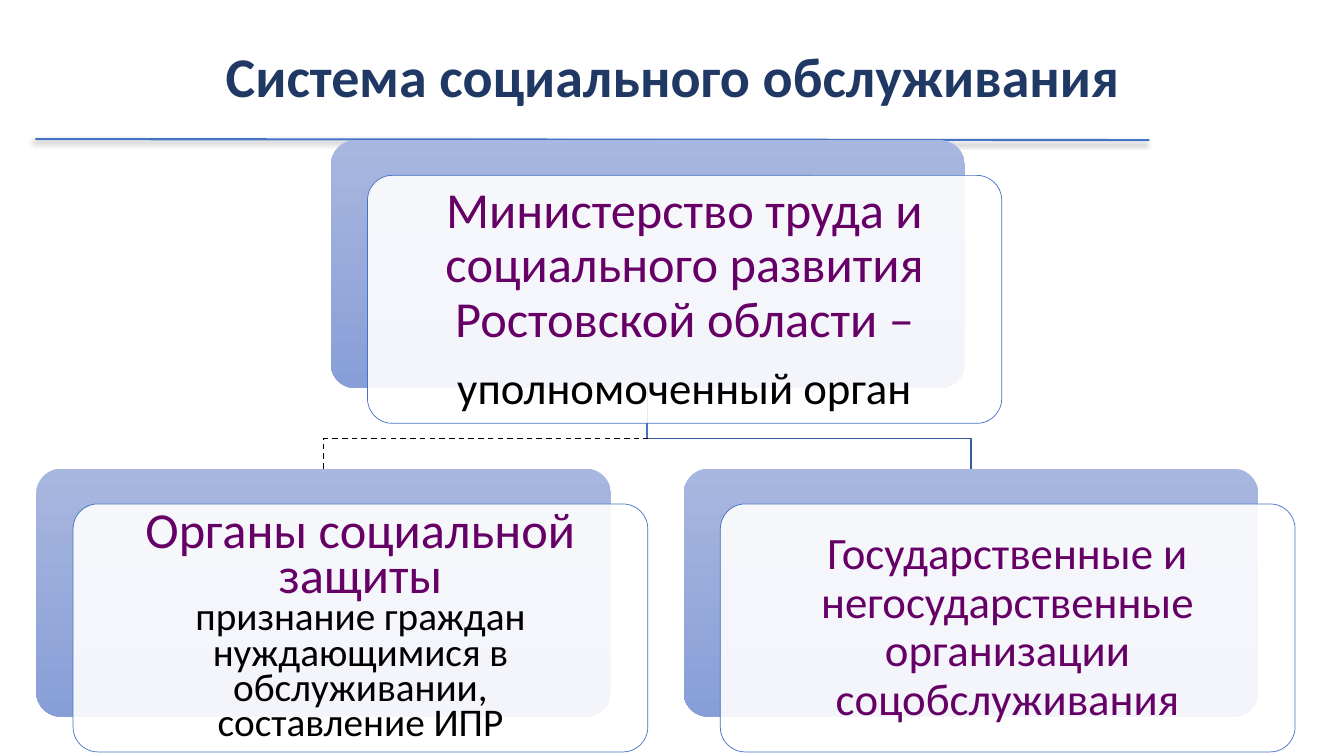
from lxml import etree
from pptx import Presentation
from pptx.dml.color import RGBColor
from pptx.enum.dml import MSO_LINE
from pptx.enum.shapes import MSO_CONNECTOR, MSO_SHAPE
from pptx.enum.text import MSO_ANCHOR, MSO_AUTO_SIZE, PP_ALIGN
from pptx.oxml import parse_xml
from pptx.oxml.ns import nsdecls, qn
from pptx.util import Inches, Pt

ROUNDED = MSO_SHAPE.ROUNDED_RECTANGLE
STRAIGHT = MSO_CONNECTOR.STRAIGHT
CENTER = PP_ALIGN.CENTER
MIDDLE = MSO_ANCHOR.MIDDLE
NO_AUTOFIT = MSO_AUTO_SIZE.NONE
DASH = MSO_LINE.DASH

FONT = "Calibri"
COLORS = {
    "title": "203864",
    "line": "4472C4",
    "branch": "365B9D",
    "purple": "660066",
    "black": "000000",
    "white": "FFFFFF",
    "back_top": "A8B7DF",
    "back_bottom": "889ED7",
}
CARD_HEIGHT = 2.46
CARD_SHIFT = (0.365, 0.35)
TRUNK_X, TRUNK_TOP, BRANCH_Y, BRANCH_BOTTOM = 6.42, 3.85, 4.35, 4.65

# left, top, width, inset, line spacing, space after, (text, size, colour)
CARDS = [
    (3.28, 1.39, 6.29, 0.15, 0.9, 12.6, [
        ("Министерство труда и социального развития Ростовской области –", 36, "purple"),
        ("уполномоченный орган", 32, "black"),
    ]),
    (0.36, 4.65, 5.7, 0.15, 0.75, 0, [
        ("Органы социальной защиты", 36, "purple"),
        ("признание граждан нуждающимися в обслуживании,\nсоставление ИПР", 28, "black"),
    ]),
    (6.78, 4.65, 5.7, 0.13, 0.9, 11.2, [
        ("Государственные и негосударственные организации соцобслуживания", 32, "purple"),
    ]),
]


def rgb(name):
    return RGBColor.from_string(COLORS[name])


def set_line(shape, color, width):
    shape.line.color.rgb = rgb(color)
    shape.line.width = Pt(width)


def format_paragraph(paragraph, text, size, color, spacing, bold=False):
    paragraph.text = text
    paragraph.alignment = CENTER
    paragraph.line_spacing = spacing
    values = {"name": FONT, "size": Pt(size), "bold": bold}
    for name, value in values.items():
        setattr(paragraph.font, name, value)
    paragraph.font.color.rgb = rgb(color)


def add_title(slide, text):
    title = slide.shapes.title
    place = {"left": 0.92, "top": 0.4, "width": 11.5, "height": 0.77}
    for name, value in place.items():
        setattr(title, name, Inches(value))
    frame = title.text_frame
    frame.auto_size = NO_AUTOFIT
    frame.vertical_anchor = MIDDLE
    format_paragraph(frame.paragraphs[0], text, 40, "title", 0.9, bold=True)


def add_line(slide, start, end, shadow=False):
    points = [Inches(value) for value in (*start, *end)]
    connector = slide.shapes.add_connector(STRAIGHT, *points)
    set_line(connector, "line", 1.5)
    properties = connector._element.spPr
    if shadow:
        properties.append(parse_xml(
            f'<a:effectLst {nsdecls("a")}>'
            f'<a:outerShdw blurRad="{Pt(4)}" dist="{Pt(3)}" dir="8100000">'
            f'<a:srgbClr val="{COLORS["black"]}"><a:alpha val="40000"/></a:srgbClr>'
            '</a:outerShdw></a:effectLst>'))
    else:
        etree.SubElement(properties, qn("a:effectLst"))


def add_branch(slide, end_x, color, dash=None):
    """Draw the bent line from the ministry down to one lower card."""
    builder = slide.shapes.build_freeform(
        Inches(TRUNK_X), Inches(TRUNK_TOP))
    corners = [(TRUNK_X, BRANCH_Y), (end_x, BRANCH_Y), (end_x, BRANCH_BOTTOM)]
    builder.add_line_segments(
        [(Inches(x), Inches(y)) for x, y in corners], close=False)
    branch = builder.convert_to_shape()
    branch.shadow.inherit = False
    branch.fill.background()
    set_line(branch, color, 1)
    if dash:
        branch.line.dash_style = dash


def add_rounded(slide, left, top, width):
    shape = slide.shapes.add_shape(
        ROUNDED, Inches(left), Inches(top), Inches(width), Inches(CARD_HEIGHT))
    shape.adjustments[0] = 0.1
    shape.shadow.inherit = False
    return shape


def add_card(slide, left, top, width, inset, spacing, space_after, lines):
    """Add a gradient plate with a translucent text plate shifted over it."""
    back = add_rounded(slide, left, top, width)
    back.line.fill.background()
    back.fill.gradient()
    back.fill.gradient_angle = 270
    for stop, color in zip(back.fill.gradient_stops, ("back_top", "back_bottom")):
        stop.color.rgb = rgb(color)

    front = add_rounded(slide, left + CARD_SHIFT[0], top + CARD_SHIFT[1], width)
    set_line(front, "line", 0.5)
    front.fill.solid()
    front.fill.fore_color.rgb = rgb("white")
    fill_color = front._element.spPr.find(qn("a:solidFill")).find(qn("a:srgbClr"))
    etree.SubElement(fill_color, qn("a:alpha")).set("val", "90000")

    frame = front.text_frame
    frame.word_wrap = True
    frame.vertical_anchor = MIDDLE
    for side in ("left", "top", "right", "bottom"):
        setattr(frame, f"margin_{side}", Inches(inset))
    for index, (text, size, color) in enumerate(lines):
        paragraph = frame.add_paragraph() if index else frame.paragraphs[0]
        format_paragraph(paragraph, text, size, color, spacing)
        paragraph.space_after = Pt(space_after)


def main():
    presentation = Presentation()
    presentation.slide_width = Inches(13.33)
    presentation.slide_height = Inches(7.5)
    slide = presentation.slides.add_slide(presentation.slide_layouts[5])

    add_title(slide, "Система социального обслуживания")
    add_line(slide, (0.35, 1.38), (11.4, 1.39), shadow=True)
    add_branch(slide, 9.63, "branch")
    add_branch(slide, 3.21, "black", DASH)
    for card in CARDS:
        add_card(slide, *card)
    add_line(slide, (TRUNK_X, 4.2), (TRUNK_X, BRANCH_Y))

    presentation.save("out.pptx")


if __name__ == "__main__":
    main()
